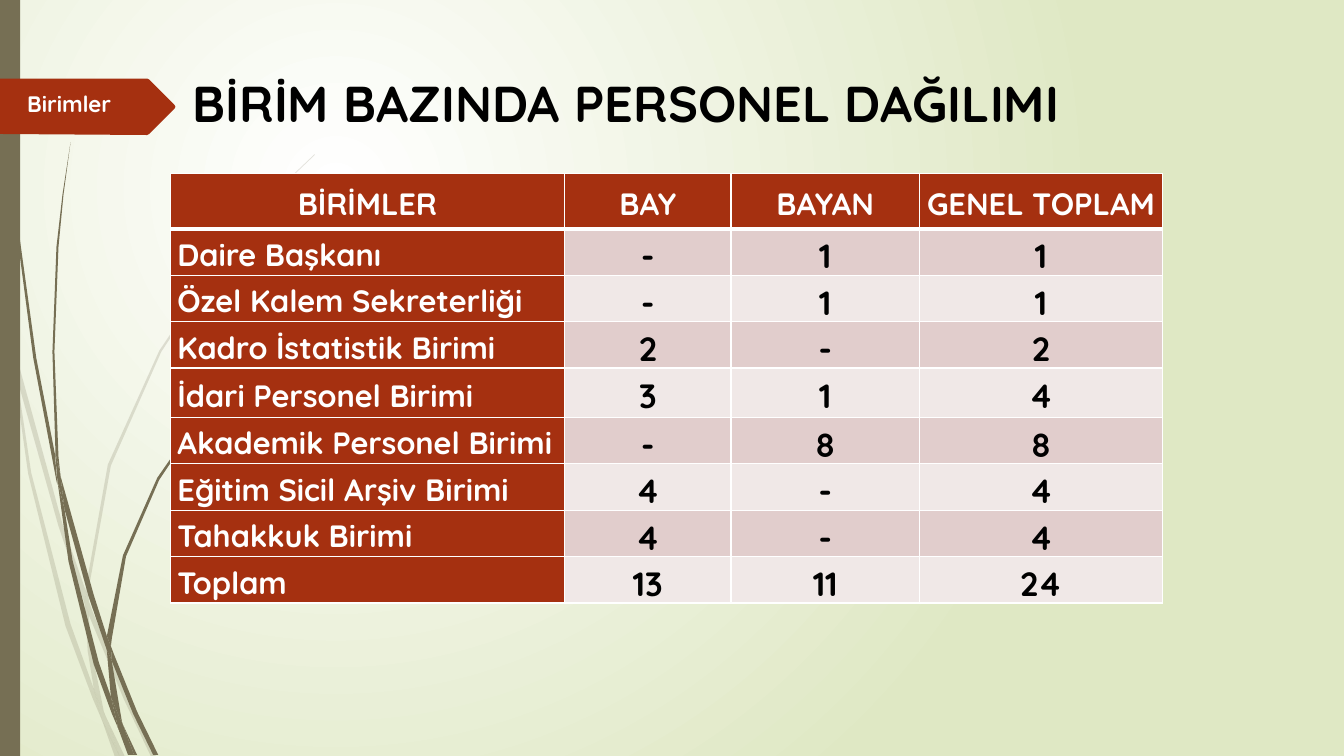
from dataclasses import dataclass
from typing import NamedTuple

import lxml.etree
import pptx
import pptx.dml.color
import pptx.enum.shapes
import pptx.enum.text
import pptx.oxml.ns
import pptx.shapes.autoshape
import pptx.slide
import pptx.table
import pptx.text.text
import pptx.util

CELL = 9144  # the slide is a grid of 1333 columns by 750 rows
COLUMNS, ROWS = 1333, 750
Colour = pptx.dml.color.RGBColor
Points = list[tuple[int, int]]


@dataclass(frozen=True)
class Theme:
    font: str = "Quicksand"
    white: Colour = Colour.from_string("FFFFFF")
    black: Colour = Colour.from_string("000000")
    meadow: Colour = Colour.from_string("DFE8C4")
    olive: Colour = Colour.from_string("766F54")
    rust: Colour = Colour.from_string("A53010")
    bands: tuple[Colour, Colour] = (Colour.from_string("E1CDCC"), Colour.from_string("F0E8E7"))
    title_size: int = 36
    badge_size: int = 16
    label_size: int = 22
    count_size: int = 24
    faint_alpha: int = 20


THEME = Theme()


class Area(NamedTuple):
    """A rectangle in grid columns and rows."""
    left: int
    top: int
    width: int
    height: int

    def emu(self) -> list[pptx.util.Emu]:
        return [grid(value) for value in self]


class Unit(NamedTuple):
    name: str
    men: str
    women: str
    total: str


HEADINGS = Unit("BİRİMLER", "BAY", "BAYAN", "GENEL TOPLAM")
UNITS = [
    Unit("Daire Başkanı", "-", "1", "1"),
    Unit("Özel Kalem Sekreterliği", "-", "1", "1"),
    Unit("Kadro İstatistik Birimi", "2", "-", "2"),
    Unit("İdari Personel Birimi", "3", "1", "4"),
    Unit("Akademik Personel Birimi", "-", "8", "8"),
    Unit("Eğitim Sicil Arşiv Birimi", "4", "-", "4"),
    Unit("Tahakkuk Birimi", "4", "-", "4"),
    Unit("Toplam", "13", "11", "24"),
]
TABLE_AREA = Area(169, 172, 984, 426)
COLUMN_WIDTHS = [391, 165, 187, 241]
ROW_HEIGHTS = [55, 46, 46, 46, 49, 46, 46, 46, 46]

FAINT_GRASS: list[Points] = [
    [(11, 350), (9, 322), (0, 282), (0, 299), (10, 344)],
    [(58, 522), (84, 599), (85, 586), (62, 520), (14, 345), (17, 376)],
    [(92, 607), (88, 596), (88, 610), (123, 694), (150, 751), (155, 751), (127, 692)],
    [(119, 751), (124, 751), (105, 711)],
    [(93, 683), (70, 619), (31, 469), (17, 376), (11, 350), (28, 470), (65, 621), (92, 693),
     (101, 714), (99, 707)],
    [(84, 599), (87, 646), (93, 683), (96, 692), (105, 711), (103, 706), (91, 646), (88, 610),
     (88, 608)],
    [(88, 584), (110, 462), (160, 349), (229, 245), (268, 198), (290, 175), (312, 154), (312, 153),
     (289, 175), (268, 197), (228, 244), (158, 348), (107, 461), (85, 584), (85, 586), (88, 596)],
    [(101, 714), (114, 751), (119, 751)],
    [(88, 608), (88, 610), (88, 596), (85, 586), (84, 599)],
    [(96, 692), (93, 683), (99, 707), (101, 714), (119, 751), (105, 711)],
]
DARK_GRASS: list[Points] = [
    [(7, 110), (17, 233), (33, 355), (56, 477), (57, 481), (55, 457), (55, 453), (36, 355),
     (19, 232), (8, 109), (5, 48), (4, 0), (3, 0), (4, 48)],
    [(88, 592), (106, 645), (106, 633), (106, 631), (93, 590), (60, 472), (64, 505)],
    [(113, 649), (110, 641), (111, 656), (132, 708), (152, 749), (157, 749), (136, 706)],
    [(110, 691), (98, 657), (72, 556), (64, 505), (57, 477), (68, 557), (93, 659), (111, 708),
     (117, 722), (116, 717)],
    [(60, 472), (58, 453), (54, 349), (58, 245), (63, 193), (70, 141), (62, 193), (56, 245),
     (52, 349), (55, 449)],
    [(133, 749), (136, 749), (122, 719)],
    [(57, 477), (64, 505), (60, 472), (55, 449), (55, 453)],
    [(111, 633), (125, 552), (158, 476), (205, 406), (231, 374), (245, 359), (261, 344), (260, 344),
     (245, 358), (231, 373), (204, 405), (156, 474), (122, 551), (106, 631), (110, 641)],
    [(117, 722), (127, 749), (131, 749)],
    [(106, 645), (110, 691), (116, 706), (122, 719), (121, 716), (111, 656), (109, 651)],
    [(106, 645), (109, 651), (111, 656), (110, 641), (106, 631), (106, 633)],
    [(116, 706), (110, 691), (116, 717), (117, 722), (130, 749), (133, 749), (122, 719)],
]
BADGE: Points = [(0, 78), (146, 78), (148, 79), (173, 104), (174, 106), (173, 108), (148, 133),
                 (146, 134), (0, 133)]


def grid(cells: int) -> pptx.util.Emu:
    return pptx.util.Emu(cells * CELL)


def add_xml(parent: lxml.etree.ElementBase, tag: str, **attributes: str) -> lxml.etree.ElementBase:
    child = lxml.etree.SubElement(parent, pptx.oxml.ns.qn(tag))
    child.attrib.update(attributes)
    return child


def paint(shape: pptx.shapes.autoshape.Shape, colour: Colour) -> None:
    shape.fill.solid()
    shape.fill.fore_color.rgb = colour
    shape.line.fill.background()
    shape.shadow.inherit = False


def add_outline(slide: pptx.slide.Slide, points: Points, colour: Colour, alpha: int = 100) -> None:
    builder = slide.shapes.build_freeform(*points[0], scale=float(CELL))
    builder.add_line_segments(points[1:], close=True)
    outline = builder.convert_to_shape()
    paint(outline, colour)
    if alpha < 100:
        tint = outline.element.spPr.find(".//" + pptx.oxml.ns.qn("a:srgbClr"))
        add_xml(tint, "a:alpha", val=str(alpha * 1000))


def write(frame: pptx.text.text.TextFrame, text: str, size: int, colour: Colour,
          centred: bool = False) -> None:
    frame.text = text
    paragraph = frame.paragraphs[0]
    align = pptx.enum.text.PP_ALIGN
    paragraph.alignment = align.CENTER if centred else align.LEFT
    font = paragraph.runs[0].font
    font.name, font.size, font.bold = THEME.font, pptx.util.Pt(size), True
    font.color.rgb = colour


def set_background(slide: pptx.slide.Slide) -> None:
    """Radial glow centred in the upper left quarter."""
    fill = slide.background.fill
    fill.gradient()
    for stop, colour in zip(fill.gradient_stops, (THEME.white, THEME.meadow)):
        stop.color.rgb = colour
    gradient = slide.element.find(".//" + pptx.oxml.ns.qn("a:gradFill"))
    gradient.remove(gradient.find(pptx.oxml.ns.qn("a:lin")))
    glow = add_xml(gradient, "a:path", path="circle")
    add_xml(glow, "a:fillToRect", l="50000", t="50000", r="100000", b="100000")


def add_borders(cell: pptx.table._Cell, row: int) -> None:
    properties = cell._tc.get_or_add_tcPr()
    thick_side = {0: "B", 1: "T"}.get(row)
    for position, side in enumerate("LRTB"):
        width = pptx.util.Pt(3 if side == thick_side else 1)
        border = add_xml(properties, f"a:ln{side}", w=str(int(width)))
        add_xml(add_xml(border, "a:solidFill"), "a:srgbClr", val=str(THEME.white))
        properties.insert(position, border)


def add_staff_table(slide: pptx.slide.Slide) -> None:
    records = [HEADINGS, *UNITS]
    staff = slide.shapes.add_table(len(records), len(HEADINGS), *TABLE_AREA.emu()).table
    staff.first_col = True
    for column, width in zip(staff.columns, COLUMN_WIDTHS):
        column.width = grid(width)
    for row, (record, height) in enumerate(zip(records, ROW_HEIGHTS)):
        staff.rows[row].height = grid(height)
        for column, text in enumerate(record):
            cell = staff.cell(row, column)
            label = row == 0 or column == 0
            cell.margin_left = cell.margin_right = grid(7)
            cell.margin_top = cell.margin_bottom = 0
            cell.vertical_anchor = pptx.enum.text.MSO_ANCHOR.MIDDLE
            write(cell.text_frame, text, THEME.label_size if label else THEME.count_size,
                  THEME.white if label else THEME.black, centred=row == 0 or column > 0)
            cell.text_frame.paragraphs[0].line_spacing = 1.15
            cell.fill.solid()
            cell.fill.fore_color.rgb = THEME.rust if label else THEME.bands[(row - 1) % 2]
            add_borders(cell, row)


def main() -> None:
    deck = pptx.Presentation()
    deck.slide_width, deck.slide_height = grid(COLUMNS), grid(ROWS)
    slide = deck.slides.add_slide(deck.slide_layouts[5])
    set_background(slide)

    for blade in FAINT_GRASS:
        add_outline(slide, blade, THEME.olive, THEME.faint_alpha)
    for blade in DARK_GRASS:
        add_outline(slide, blade, THEME.olive)
    edge = Area(0, 0, 20, ROWS)
    paint(slide.shapes.add_shape(pptx.enum.shapes.MSO_SHAPE.RECTANGLE, *edge.emu()), THEME.olive)
    add_outline(slide, BADGE, THEME.rust)

    heading = slide.shapes.title
    heading.left, heading.top, heading.width, heading.height = Area(181, 65, 1005, 74).emu()
    write(heading.text_frame, "BİRİM BAZINDA PERSONEL DAĞILIMI", THEME.title_size, THEME.black)
    heading.text_frame.vertical_anchor = pptx.enum.text.MSO_ANCHOR.MIDDLE
    heading.text_frame.auto_size = pptx.enum.text.MSO_AUTO_SIZE.NONE

    section = slide.shapes.add_textbox(*Area(0, 85, 169, 37).emu()).text_frame
    section.word_wrap = True
    section.margin_left = grid(27)
    write(section, "Birimler", THEME.badge_size, THEME.white)

    add_staff_table(slide)
    deck.save("out.pptx")


if __name__ == "__main__":
    main()
